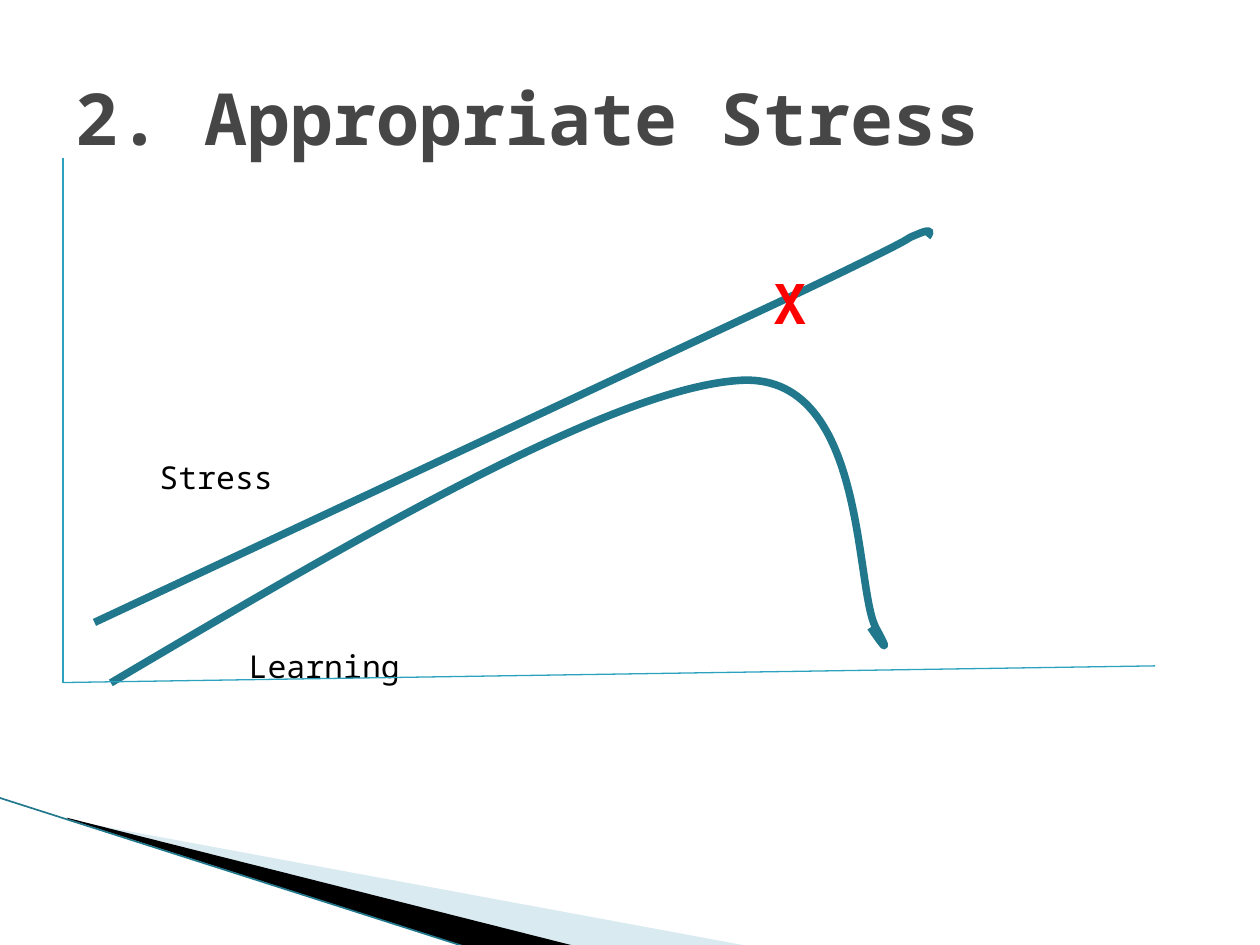
from dataclasses import dataclass

from lxml.etree import SubElement
from pptx import Presentation
from pptx.dml.color import RGBColor
from pptx.enum.shapes import MSO_CONNECTOR
from pptx.enum.text import MSO_ANCHOR, MSO_AUTO_SIZE
from pptx.oxml.ns import qn
from pptx.util import Emu, Inches, Pt

COLUMN = ROW = Inches(0.1)
COLUMNS, ROWS = 100, 75
FONT = "Noto Sans Mono"
SEGMENT_TAGS = {1: "a:lnTo", 3: "a:cubicBezTo"}

BLACK = RGBColor(0x00, 0x00, 0x00)
GREY = RGBColor(0x46, 0x46, 0x46)
RED = RGBColor(0xFF, 0x00, 0x00)
TEAL = RGBColor(0x2D, 0xA2, 0xBF)
DARK_TEAL = RGBColor(0x21, 0x78, 0x8D)
PALE_BLUE = RGBColor(0xA0, 0xCB, 0xDC)

Point = tuple[float, float]


@dataclass(frozen=True)
class Wedge:
    corners: list[Point]
    color: RGBColor
    opacity: int = 100


@dataclass(frozen=True)
class Rule:
    start: Point
    end: Point
    color: RGBColor
    width: float


@dataclass(frozen=True)
class Trend:
    top_left: Point
    bottom_right: Point
    start: Point
    segments: list[list[Point]]


@dataclass(frozen=True)
class Label:
    text: str
    column: float
    row: float
    columns: float
    rows: float
    size: int
    color: RGBColor = BLACK
    bold: bool = False
    anchor: MSO_ANCHOR = MSO_ANCHOR.TOP
    auto_size: MSO_AUTO_SIZE = MSO_AUTO_SIZE.SHAPE_TO_FIT_TEXT


WEDGES = [
    Wedge([(5.5, 65.1), (59.5, 75.1), (45.6, 75.1), (5.5, 65)], PALE_BLUE, 40),
    Wedge([(5.3, 64.9), (45.7, 75.1), (37.2, 75.2), (5.4, 65)], BLACK),
]
EDGE = Rule((-0.1, 63.3), (37.1, 75.2), DARK_TEAL, 0.95)
AXES = [
    Rule((5, 54.17), (91.67, 52.85), TEAL, 0.75),
    Rule((5, 54.17), (5, 12.5), TEAL, 0.75),
]
TRENDS = [
    Trend((7.5, 18.3), (73.8, 49.4), (7.5, 49.4), [
        [(63.7, 23.1)],
        [(74.6, 17.9), (71.1, 19.3), (72.8, 18.6)],
        [(74.4, 17.9), (73.6, 18.8), (73.6, 18.8)],
        [(73.6, 18.8)],
    ]),
    Trend((8.8, 30.1), (70.2, 54.2), (8.8, 54.2), [
        [(28.6, 42.5), (48.5, 30.9), (58.6, 30.2)],
        [(68.8, 29.4), (67.8, 46.5), (69.5, 49.8)],
        [(71.3, 53.1), (69.1, 49.8), (69.1, 49.8)],
        [(69.1, 49.8)],
    ]),
]
LABELS = [
    Label("2. Appropriate Stress", 5, 3, 90, 12.5, 41, GREY, True,
          MSO_ANCHOR.MIDDLE, MSO_AUTO_SIZE.NONE),
    Label("Stress", 11.67, 35.85, 14.2, 4, 18),
    Label("Learning", 18.75, 50.85, 14.6, 4, 18),
    Label("X", 60.4, 20.8, 8.3, 6.4, 32, RED, True),
]


def place(point: Point) -> tuple[Emu, Emu]:
    return Emu(round(point[0] * COLUMN)), Emu(round(point[1] * ROW))


def draw_outline(page, points: list[Point]):
    builder = page.shapes.build_freeform(*place(points[0]))
    builder.add_line_segments([place(point) for point in points[1:]], close=True)
    shape = builder.convert_to_shape()
    shape.shadow.inherit = False
    return shape


def draw_wedge(page, wedge: Wedge) -> None:
    shape = draw_outline(page, wedge.corners)
    shape.fill.solid()
    shape.fill.fore_color.rgb = wedge.color
    shape.line.fill.background()
    if wedge.opacity < 100:
        color = shape.fill._xPr.find(qn("a:solidFill"))[0]
        SubElement(color, qn("a:alpha")).set("val", str(wedge.opacity * 1000))


def draw_trend(page, trend: Trend) -> None:
    left, top = trend.top_left
    right, bottom = trend.bottom_right
    shape = draw_outline(page, [(left, top), (right, top), (right, bottom), (left, bottom)])
    outline = next(shape._element.iter(qn("a:path")))
    for child in list(outline):
        outline.remove(child)
    steps = [("a:moveTo", [trend.start])]
    steps += [(SEGMENT_TAGS[len(points)], points) for points in trend.segments]
    for tag, points in steps:
        step = SubElement(outline, qn(tag))
        for column, row in points:
            x, y = place((column - left, row - top))
            knot = SubElement(step, qn("a:pt"))
            knot.set("x", str(int(x)))
            knot.set("y", str(int(y)))
    shape.fill.background()
    shape.line.color.rgb = DARK_TEAL
    shape.line.width = Pt(4.33)


def draw_rule(page, rule: Rule) -> None:
    line = page.shapes.add_connector(
        MSO_CONNECTOR.STRAIGHT, *place(rule.start), *place(rule.end))
    line.line.color.rgb = rule.color
    line.line.width = Pt(rule.width)
    SubElement(line._element.spPr, qn("a:effectLst"))


def draw_label(page, label: Label) -> None:
    box = page.shapes.add_textbox(*place((label.column, label.row)),
                                  *place((label.columns, label.rows)))
    frame = box.text_frame
    frame_format = {"word_wrap": True, "auto_size": label.auto_size,
                    "vertical_anchor": label.anchor}
    for name, value in frame_format.items():
        setattr(frame, name, value)
    span = frame.paragraphs[0].add_run()
    span.text = label.text
    font_format = {"name": FONT, "size": Pt(label.size), "bold": label.bold}
    for name, value in font_format.items():
        setattr(span.font, name, value)
    span.font.color.rgb = label.color


def main() -> None:
    deck = Presentation()
    deck.slide_width, deck.slide_height = place((COLUMNS, ROWS))
    page = deck.slides.add_slide(deck.slide_layouts[6])
    for wedge in WEDGES:
        draw_wedge(page, wedge)
    draw_rule(page, EDGE)
    draw_label(page, LABELS[0])
    for trend in TRENDS:
        draw_trend(page, trend)
    for label in LABELS[1:]:
        draw_label(page, label)
    for axis in AXES:
        draw_rule(page, axis)
    deck.save("out.pptx")


if __name__ == "__main__":
    main()
